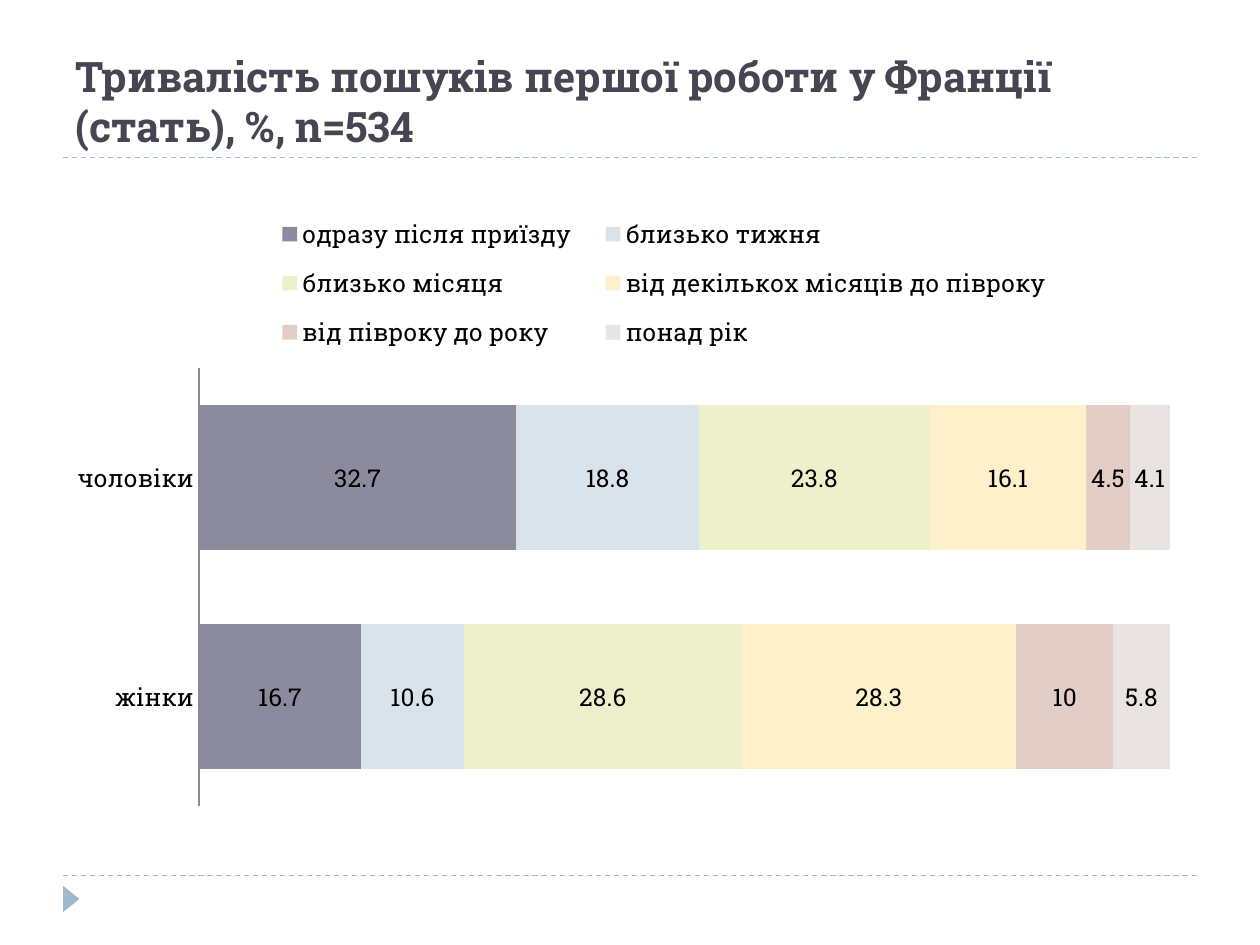
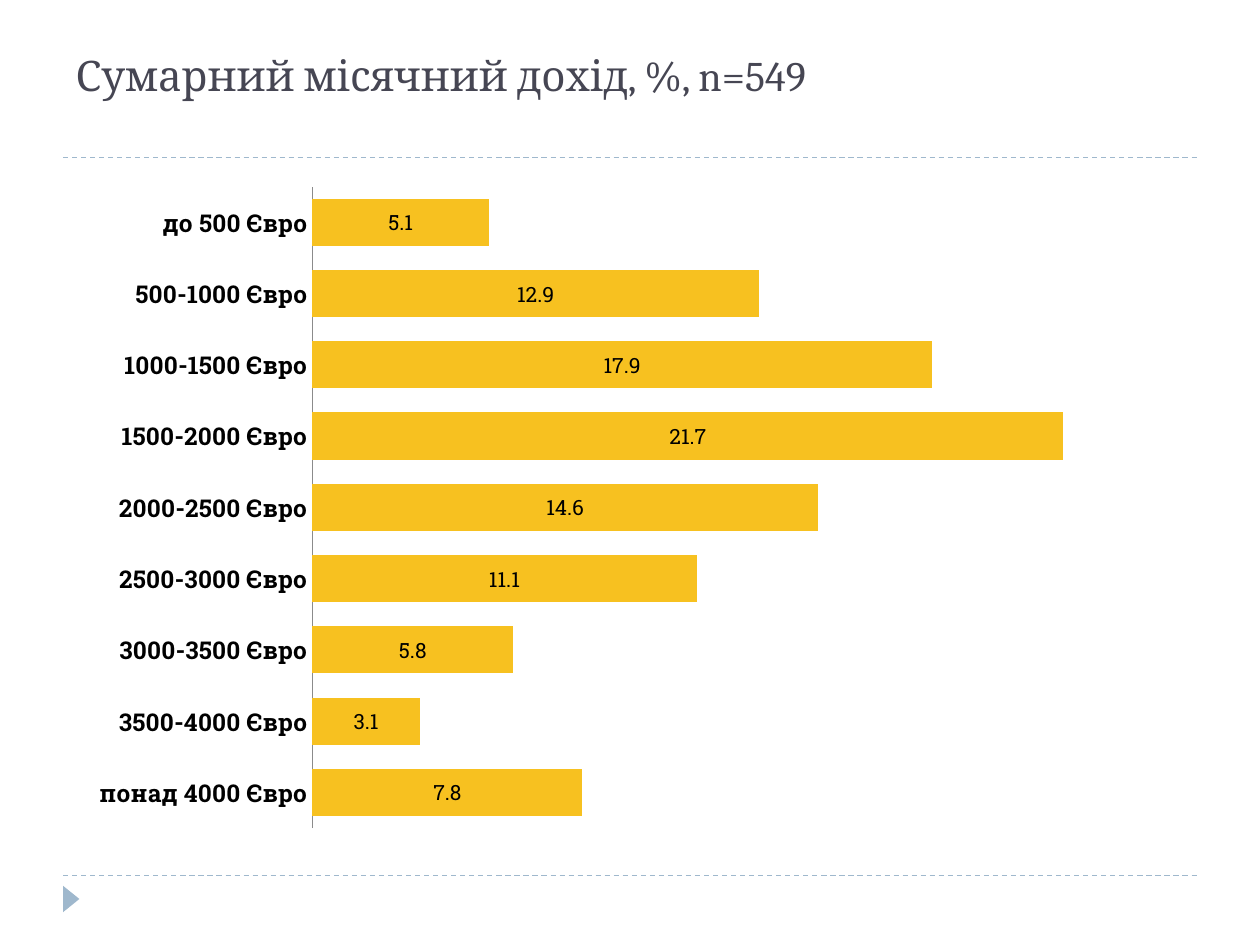
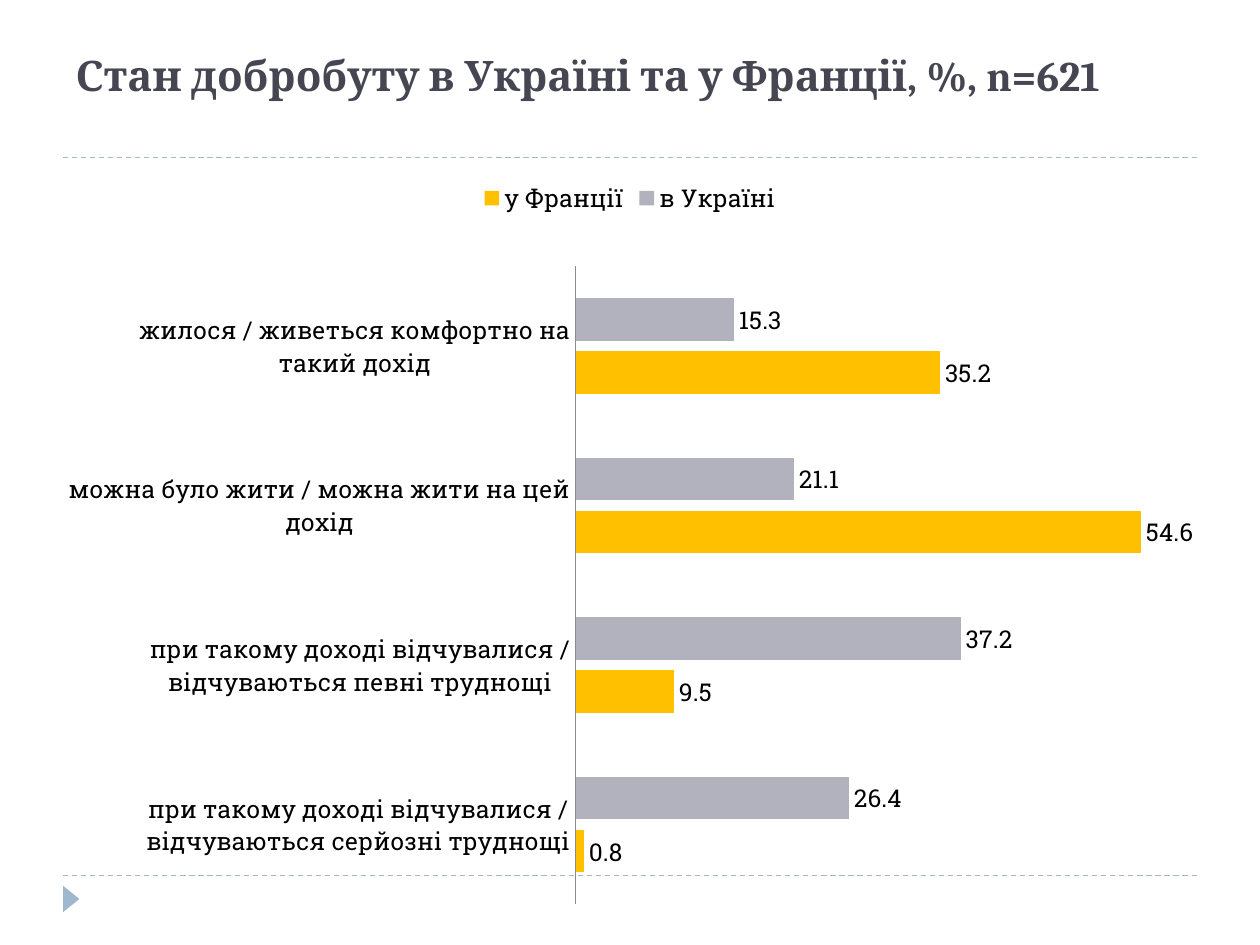
from lxml import etree
from pptx import Presentation
from pptx.chart.data import CategoryChartData
from pptx.dml.color import RGBColor
from pptx.enum import chart as charts, dml, shapes, text
from pptx.oxml import ns
from pptx.util import Pt

COLORS = {
    "title": "464653", "frame": "9FB8CD", "axis": "8B8B8B", "text": "000000",
    "slate": "8B8B9D", "ice": "D9E3EB", "lime": "EDF0CA", "cream": "FDF0CA",
    "rose": "E3CEC7", "stone": "E9E3E1", "gold": "F7C120", "gray": "B2B2BE",
    "amber": "FFC000",
}
LEFT, WIDTH, CHART_TOP, TITLE_TOP = 36, 648, 95.76, 12.24
CHART_FONT = "Roboto Slab"

SLIDES = [
    {
        "title": "Тривалість пошуків першої роботи у Франції \v(стать), %, n=534",
        "font": "Roboto Slab", "bold": True, "title_height": 77.76,
        "type": charts.XL_CHART_TYPE.BAR_STACKED_100, "height": 388.8,
        "categories": ["чоловіки", "жінки"],
        "series": [
            ("одразу після приїзду", [32.7, 16.7], "slate"),
            ("близько тижня", [18.8, 10.6], "ice"),
            ("близько місяця", [23.8, 28.6], "lime"),
            ("від декількох місяців до півроку", [16.1, 28.3], "cream"),
            ("від півроку до року", [4.5, 10], "rose"),
            ("понад рік", [4.1, 5.8], "stone"),
        ],
        "gap": 51, "overlap": 100, "maximum": 1, "plot": (0.12, 0.294, 0.856, 0.645),
        "legend": True, "legend_area": (0.17, 0.05, 0.72, 0.24),
        "labels": charts.XL_LABEL_POSITION.CENTER, "format": "General",
        "size": 14, "bold_categories": False,
    },
    {
        "title": "Сумарний місячний дохід, %, n=549",
        "font": "Cambria", "bold": False, "title_height": 48.24,
        "type": charts.XL_CHART_TYPE.BAR_CLUSTERED, "height": 388.8,
        "categories": [
            "до 500 Євро", "500-1000 Євро", "1000-1500 Євро", "1500-2000 Євро",
            "2000-2500 Євро", "2500-3000 Євро", "3000-3500 Євро",
            "3500-4000 Євро", "понад 4000 Євро",
        ],
        "series": [
            ("Series 1", [5.1, 12.9, 17.9, 21.7, 14.6, 11.1, 5.8, 3.1, 7.8], "gold"),
        ],
        "gap": 51, "overlap": -25, "maximum": 25, "plot": (0.22, 0.028, 0.763, 0.943),
        "legend": False, "legend_area": None,
        "labels": charts.XL_LABEL_POSITION.CENTER, "format": "####.0",
        "size": 12, "bold_categories": True,
    },
    {
        "title": "Стан добробуту в Україні та у Франції, %, n=621",
        "font": "Cambria", "bold": True, "title_height": 48.24,
        "type": charts.XL_CHART_TYPE.BAR_CLUSTERED, "height": 444.24,
        "categories": [
            "жилося / живеться комфортно на такий дохід",
            "можна було жити / можна жити на цей дохід",
            "при такому доході відчувалися / відчуваються певні труднощі",
            "при такому доході відчувалися / відчуваються серйозні труднощі",
        ],
        "series": [
            ("в Україні", [15.3, 21.1, 37.2, 26.4], "gray"),
            ("у Франції", [35.2, 54.6, 9.5, 0.8], "amber"),
        ],
        "gap": 150, "overlap": -25, "maximum": 60, "plot": (0.452, 0.127, 0.548, 0.821),
        "legend": True, "legend_area": None,
        "labels": charts.XL_LABEL_POSITION.OUTSIDE_END, "format": "General",
        "size": 14, "bold_categories": False,
    },
]


def color(name):
    return RGBColor.from_string(COLORS[name])


def place_area(parent, index, area, inner=False):
    for old in parent.findall(ns.qn("c:layout")):
        parent.remove(old)
    layout = etree.Element(ns.qn("c:layout"))
    manual = etree.SubElement(layout, ns.qn("c:manualLayout"))
    settings = [("layoutTarget", "inner")] if inner else []
    settings += [("xMode", "edge"), ("yMode", "edge")]
    settings += zip("xywh", area)
    for tag, value in settings:
        etree.SubElement(manual, ns.qn(f"c:{tag}")).set("val", str(value))
    parent.insert(index, layout)


deck = Presentation()
deck.slide_width, deck.slide_height = Pt(720), Pt(540)
title_only = deck.slide_layouts[5]
for holder in list(title_only.placeholders):
    if holder.placeholder_format.type != shapes.PP_PLACEHOLDER.TITLE:
        holder.element.getparent().remove(holder.element)

pages = [deck.slides.add_slide(title_only) for slide in SLIDES]

frame = []
for y in (500.4, 90):
    rule = pages[0].shapes.add_connector(
        shapes.MSO_CONNECTOR.STRAIGHT, Pt(LEFT), Pt(y), Pt(LEFT + WIDTH), Pt(y))
    rule.line.color.rgb = color("frame")
    rule.line.width = Pt(0.75)
    rule.line.dash_style = dml.MSO_LINE.DASH
    etree.SubElement(rule.element.spPr, ns.qn("a:effectLst"))
    frame.append(rule)
marker = pages[0].shapes.add_shape(
    shapes.MSO_SHAPE.ISOSCELES_TRIANGLE, Pt(33.12), Pt(509.04), Pt(15.12), Pt(9.36))
marker.rotation = 90
marker.shadow.inherit = False
marker.fill.solid()
marker.fill.fore_color.rgb = color("frame")
marker.line.fill.background()
frame.append(marker)
for part in frame:
    title_only.shapes.element.append(part.element)

for page, slide in zip(pages, SLIDES):
    title = page.shapes.title
    title.left, title.top = Pt(LEFT), Pt(TITLE_TOP)
    title.width, title.height = Pt(WIDTH), Pt(slide["title_height"])
    title.text_frame.text = slide["title"]
    title.text_frame.word_wrap = True
    title.text_frame.auto_size = text.MSO_AUTO_SIZE.NONE
    title.text_frame.vertical_anchor = text.MSO_ANCHOR.BOTTOM
    para = title.text_frame.paragraphs[0]
    para.alignment = text.PP_ALIGN.LEFT
    for span in para.runs:
        span.font.name = slide["font"]
        span.font.size = Pt(24)
        span.font.bold = slide["bold"]
        span.font.color.rgb = color("title")

    data = CategoryChartData(number_format=slide["format"])
    data.categories = slide["categories"]
    for name, values, fill in slide["series"]:
        data.add_series(name, values)
    chart = page.shapes.add_chart(
        slide["type"], Pt(LEFT), Pt(CHART_TOP), Pt(WIDTH), Pt(slide["height"]), data).chart
    chart.has_title = False
    chart.font.name = CHART_FONT
    chart.font.size = Pt(slide["size"])
    chart.font.color.rgb = color("text")

    category_axis = chart.category_axis
    category_axis.reverse_order = True
    category_axis.major_tick_mark = charts.XL_TICK_MARK.NONE
    category_axis.format.line.color.rgb = color("axis")
    category_axis.format.line.width = Pt(0.75)
    category_axis.tick_labels.font.size = Pt(14)
    category_axis.tick_labels.font.bold = slide["bold_categories"]
    value_axis = chart.value_axis
    value_axis.visible = False
    value_axis.has_major_gridlines = False
    value_axis.minimum_scale = 0
    value_axis.maximum_scale = slide["maximum"]

    plot = chart.plots[0]
    plot.vary_by_categories = False
    plot.gap_width = slide["gap"]
    plot.overlap = slide["overlap"]
    plot.has_data_labels = True
    plot.data_labels.show_value = True
    plot.data_labels.position = slide["labels"]
    plot.data_labels.number_format = slide["format"]
    plot.data_labels.number_format_is_linked = False
    for series, (name, values, fill) in zip(plot.series, slide["series"]):
        series.format.fill.solid()
        series.format.fill.fore_color.rgb = color(fill)

    place_area(chart.element.find(".//" + ns.qn("c:plotArea")), 0, slide["plot"], inner=True)
    chart.has_legend = slide["legend"]
    if slide["legend"]:
        chart.legend.position = charts.XL_LEGEND_POSITION.TOP
        chart.legend.include_in_layout = False
    if slide["legend_area"]:
        place_area(chart.element.find(".//" + ns.qn("c:legend")), 1, slide["legend_area"])

deck.save("out.pptx")
